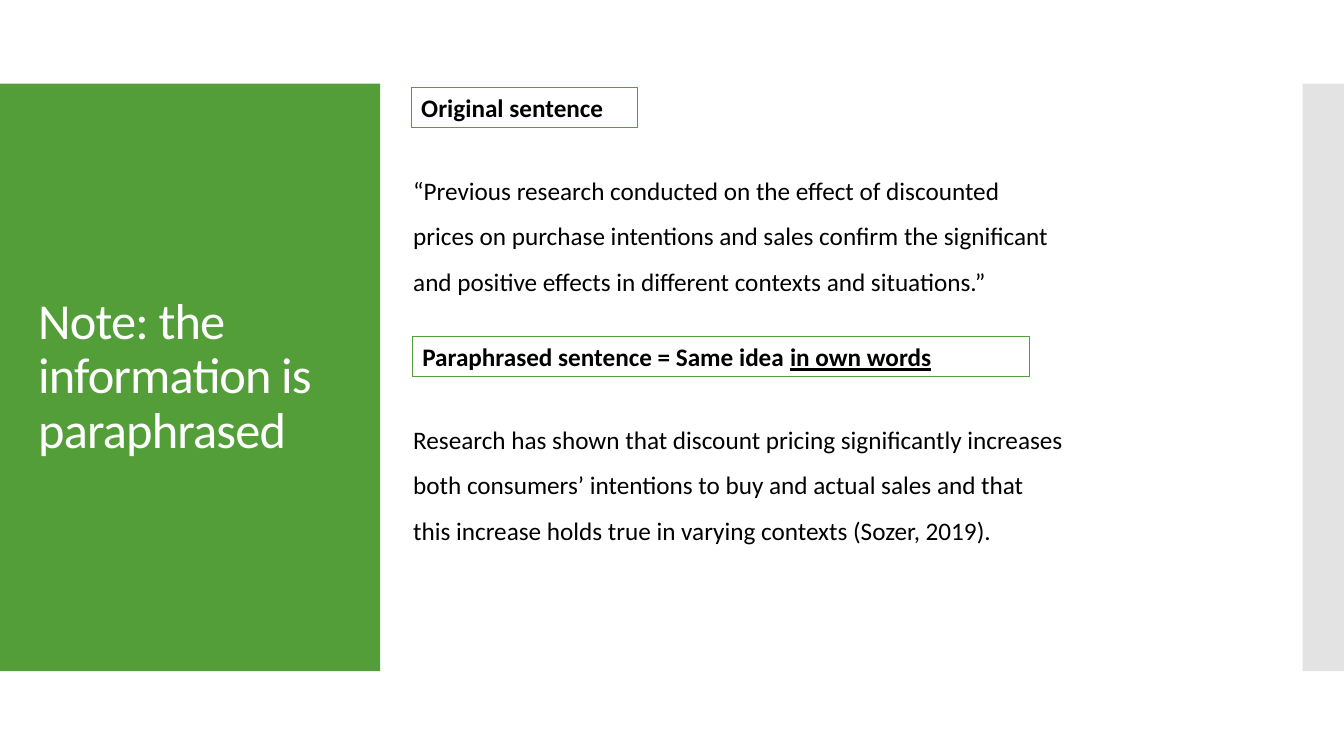
from lxml import etree
from pptx import Presentation
from pptx.dml.color import RGBColor
from pptx.enum.shapes import MSO_SHAPE as Preset
from pptx.enum.text import MSO_ANCHOR as Anchor, PP_ALIGN as Align
from pptx.oxml.ns import qn
from pptx.util import Inches, Pt

GREEN = "549E39"
GREY = "C8C8C8"
WHITE = "FFFFFF"
BLACK = "000000"


def color(code):
    return RGBColor.from_string(code)


def assign(target, values):
    for name, value in values.items():
        setattr(target, name, value)


class SlideBuilder:
    """Draws styled panels, labels and passages on the current slide."""

    font = "Calibri"
    body_size = 18

    def __init__(self, page):
        self.page = page

    def rectangle(self, place):
        box = self.page.shapes.add_shape(Preset.RECTANGLE, *map(Inches, place))
        box.shadow.inherit = False
        return box

    def panel(self, place, fill, opacity=100):
        box = self.rectangle(place)
        box.fill.solid()
        box.fill.fore_color.rgb = color(fill)
        box.line.fill.background()
        if opacity < 100:
            shade = box._element.spPr.find(qn("a:solidFill"))[0]
            etree.SubElement(shade, qn("a:alpha"), val=str(opacity * 1000))

    def fill_text(self, box, spans, anchor=Anchor.TOP, spacing=1.0, tracking=0, **style):
        assign(box.text_frame, {"word_wrap": True, "vertical_anchor": anchor})
        para = box.text_frame.paragraphs[0]
        assign(para, {"alignment": Align.LEFT, "line_spacing": spacing})
        for text, extra in spans:
            span = para.add_run()
            span.text = text
            look = {"name": self.font, "size": Pt(self.body_size), **style, **extra}
            ink = look.pop("ink", BLACK)
            assign(span.font, look)
            span.font.color.rgb = color(ink)
            if tracking:
                span.font._element.set("spc", str(tracking))

    def label(self, place, *spans):
        box = self.rectangle(place)
        box.fill.background()
        box.line.color.rgb = color(GREEN)
        box.line.width = Pt(0.75)
        self.fill_text(box, spans, bold=True)

    def text(self, place, words, **style):
        box = self.page.shapes.add_textbox(*map(Inches, place))
        self.fill_text(box, [(words, {})], **style)


def main():
    deck = Presentation()
    assign(deck, {"slide_width": Inches(13.33), "slide_height": Inches(7.5)})
    builder = SlideBuilder(deck.slides.add_slide(deck.slide_layouts[6]))

    builder.panel((0, 0.83, 3.77, 5.83), GREEN)
    builder.panel((12.92, 0.83, 0.41, 5.83), GREY, opacity=50)
    builder.text(
        (0.28, 1.23, 3.22, 5.03),
        "Note: the information is paraphrased",
        anchor=Anchor.MIDDLE, spacing=0.9, tracking=-60, size=Pt(36), ink=WHITE,
    )

    builder.label((4.08, 0.87, 2.24, 0.4), ("Original sentence", {}))
    builder.text(
        (4, 1.54, 6.67, 1.42),
        "“Previous research conducted on the effect of discounted prices on "
        "purchase intentions and sales confirm the significant and positive "
        "effects in different contexts and situations.”",
        spacing=1.5,
    )

    builder.label(
        (4.09, 3.34, 6.12, 0.4),
        ("Paraphrased sentence = Same idea ", {}),
        ("in own words", {"underline": True}),
    )
    builder.text(
        (4, 4.01, 6.67, 1.87),
        "Research has shown that discount pricing significantly increases both "
        "consumers’ intentions to buy and actual sales and that this increase "
        "holds true in varying contexts (Sozer, 2019).",
        spacing=1.5,
    )
    deck.save("out.pptx")


if __name__ == "__main__":
    main()
